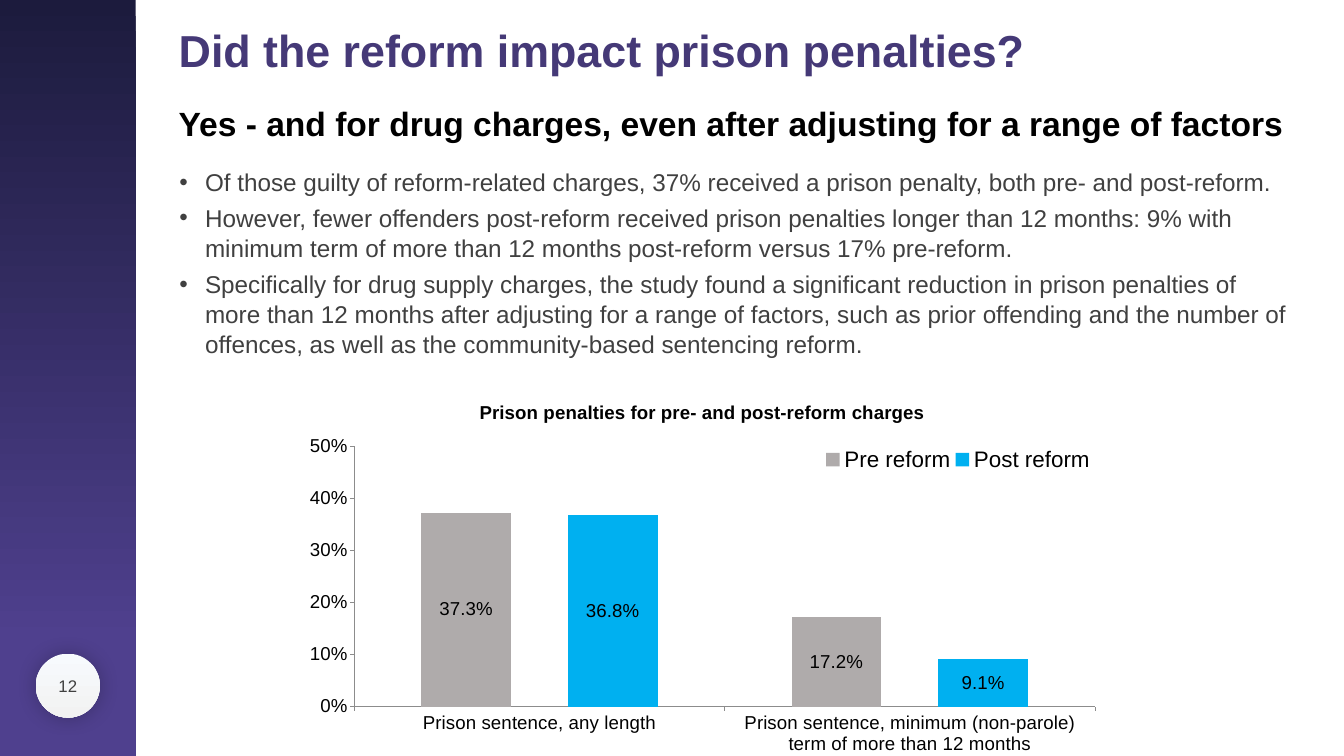
from lxml.etree import SubElement
from pptx import Presentation
from pptx.chart.data import CategoryChartData
from pptx.dml.color import RGBColor
from pptx.enum.chart import (XL_CHART_TYPE, XL_LABEL_POSITION, XL_LEGEND_POSITION,
                             XL_TICK_LABEL_POSITION, XL_TICK_MARK)
from pptx.enum.shapes import MSO_SHAPE
from pptx.enum.text import MSO_ANCHOR, MSO_AUTO_SIZE, PP_ALIGN
from pptx.oxml.ns import qn
from pptx.util import Cm, Pt

TITLE = "Did the reform impact prison penalties?"
ANSWER = "Yes - and for drug charges, even after adjusting for a range of factors"
FINDINGS = [
    "Of those guilty of reform-related charges, 37% received a prison penalty, "
    "both pre- and post-reform.",
    "However, fewer offenders post-reform received prison penalties longer than 12 months: "
    "9% with minimum term of more than 12 months post-reform versus 17% pre-reform.",
    "Specifically for drug supply charges, the study found a significant reduction in prison "
    "penalties of more than 12 months after adjusting for a range of factors, such as prior "
    "offending and the number of offences, as well as the community-based sentencing reform.",
]
PAGE = "12"
CHART_TITLE = "Prison penalties for pre- and post-reform charges"
SENTENCES = ["Prison sentence, any length",
             "Prison sentence, minimum (non-parole) term of more than 12 months"]
PENALTIES = {"Pre reform": (0.373, 0.172), "Post reform": (0.368, 0.091)}

THEME = {
    "font": "Arial",
    "title": (48, "453977"), "answer": (36, "000000"), "body": (26, "404040"),
    "page": (18, "404040"), "chart": (20, "000000"), "legend": (24, "000000"),
    "sidebar": [(0, "1C1B3D"), (0.85, "4F408E")],
    "badge": [(0, "F7FAFD"), (1, "F2F2F2")],
    "axis": "8C8C8C",
    "series": ["AFABAB", "00B0F0"],
}

# left, top, width, height in centimetres
SLIDE_SIZE = (50.8, 28.58)
PLACES = {
    "sidebar": (0, 0, 5.13, 28.58),
    "badge": (1.35, 24.71, 2.43, 2.42),
    "page": (1.35, 24.92, 2.43, 1.98),
    "title": (6.5, 0.74, 40.08, 2.31),
    "answer": (6.5, 3.78, 42.49, 1.8),
    "chart": (11.07, 14.6, 30.94, 14.25),
    "findings": (6.53, 6.15, 42.47, 7.34),
}
# left, top, width, height as shares of the chart
PLOT_SHARE = (0.075, 0.16, 0.905, 0.69)
LEGEND_SHARE = (0.645, 0.155, 0.335, 0.08)


def place(name):
    return [Cm(length) for length in PLACES[name]]


def style(font, role, bold=False):
    size, colour = THEME[role]
    font.name, font.size, font.bold = THEME["font"], Pt(size), bold
    font.color.rgb = RGBColor.from_string(colour)


def write(shape, lines, role, bold=False, align=PP_ALIGN.LEFT, anchor=MSO_ANCHOR.TOP):
    frame = shape.text_frame
    frame.text = "\n".join(lines)
    frame.word_wrap = True
    frame.auto_size = MSO_AUTO_SIZE.NONE
    frame.vertical_anchor = anchor
    for paragraph in frame.paragraphs:
        paragraph.alignment = align
        for run in paragraph.runs:
            style(run.font, role, bold)
    return frame


def add_gradient_shape(slide, kind, name):
    shape = slide.shapes.add_shape(kind, *place(name))
    shape.shadow.inherit = False
    shape.line.fill.background()
    shape.fill.gradient()
    shape.fill.gradient_angle = 270
    for stop, (position, colour) in zip(shape.fill.gradient_stops, THEME[name]):
        stop.position = position
        stop.color.rgb = RGBColor.from_string(colour)
    return shape


def add_glow_shadow(shape):
    """Add a soft black shadow with no offset."""
    effects = shape._element.spPr.find(qn("a:effectLst"))
    shadow = SubElement(effects, qn("a:outerShdw"), blurRad=str(Pt(22)), dist="0", dir="0")
    black = SubElement(shadow, qn("a:srgbClr"), val="000000")
    SubElement(black, qn("a:alpha"), val="24000")


def add_bullet(paragraph):
    paragraph.space_after = Pt(6)
    paragraph.line_spacing = 1.04
    properties = paragraph._p.get_or_add_pPr()
    properties.set("marL", str(Cm(0.97)))
    properties.set("indent", str(-Cm(0.97)))
    SubElement(properties, qn("a:buFont"), typeface=THEME["font"])
    SubElement(properties, qn("a:buChar"), char="•")


def set_layout(parent, index, shares, inner=False):
    """Fix the place of a chart part, as shares of the chart."""
    for old in parent.findall(qn("c:layout")):
        parent.remove(old)
    layout = SubElement(parent, qn("c:layout"))
    parent.insert(index, layout)
    manual = SubElement(layout, qn("c:manualLayout"))
    if inner:
        SubElement(manual, qn("c:layoutTarget"), val="inner")
    for mode in ("xMode", "yMode"):
        SubElement(manual, qn("c:" + mode), val="edge")
    for side, share in zip("xywh", shares):
        SubElement(manual, qn("c:" + side), val=str(share))


def add_penalty_chart(slide):
    data = CategoryChartData(number_format="0.0%")
    data.categories = SENTENCES
    for period, rates in PENALTIES.items():
        data.add_series(period, rates)
    chart = slide.shapes.add_chart(XL_CHART_TYPE.COLUMN_CLUSTERED, *place("chart"), data).chart
    style(chart.font, "chart")

    chart.has_title = True
    heading = chart.chart_title.text_frame
    heading.text = CHART_TITLE
    style(heading.paragraphs[0].runs[0].font, "chart", bold=True)
    chart.chart_title.include_in_layout = False

    chart.has_legend = True
    chart.legend.position = XL_LEGEND_POSITION.CORNER
    chart.legend.include_in_layout = False
    style(chart.legend.font, "legend")
    set_layout(chart.legend._element, 1, LEGEND_SHARE)
    set_layout(chart._chartSpace.chart.plotArea, 0, PLOT_SHARE, inner=True)

    for axis in (chart.category_axis, chart.value_axis):
        axis.has_major_gridlines = False
        axis.major_tick_mark = XL_TICK_MARK.OUTSIDE
        axis.minor_tick_mark = XL_TICK_MARK.NONE
        axis.format.line.color.rgb = RGBColor.from_string(THEME["axis"])
        axis.format.line.width = Pt(0.75)
    chart.category_axis.tick_label_position = XL_TICK_LABEL_POSITION.LOW
    rates_axis = chart.value_axis
    rates_axis.minimum_scale, rates_axis.maximum_scale = 0, 0.5
    rates_axis.major_unit = 0.1
    rates_axis.tick_labels.number_format = "0%"
    rates_axis.tick_labels.number_format_is_linked = False

    plot = chart.plots[0]
    plot.gap_width, plot.overlap, plot.vary_by_categories = 150, -64, False
    for series, colour in zip(plot.series, THEME["series"]):
        series.format.fill.solid()
        series.format.fill.fore_color.rgb = RGBColor.from_string(colour)
        labels = series.data_labels
        labels.show_value = True
        labels.position = XL_LABEL_POSITION.CENTER
        labels.number_format = "0.0%"
        labels.number_format_is_linked = False
        style(labels.font, "chart")


def main():
    deck = Presentation()
    deck.slide_width, deck.slide_height = (Cm(length) for length in SLIDE_SIZE)
    slide = deck.slides.add_slide(deck.slide_layouts[5])

    add_gradient_shape(slide, MSO_SHAPE.RECTANGLE, "sidebar")
    add_glow_shadow(add_gradient_shape(slide, MSO_SHAPE.OVAL, "badge"))
    write(slide.shapes.add_textbox(*place("page")), [PAGE], "page",
          align=PP_ALIGN.CENTER, anchor=MSO_ANCHOR.MIDDLE)

    title = slide.shapes.title
    title.left, title.top, title.width, title.height = place("title")
    write(title, [TITLE], "title", bold=True)
    write(slide.shapes.add_textbox(*place("answer")), [ANSWER], "answer", bold=True)

    add_penalty_chart(slide)
    findings = write(slide.shapes.add_textbox(*place("findings")), FINDINGS, "body")
    for paragraph in findings.paragraphs:
        add_bullet(paragraph)

    deck.save("out.pptx")


if __name__ == "__main__":
    main()
